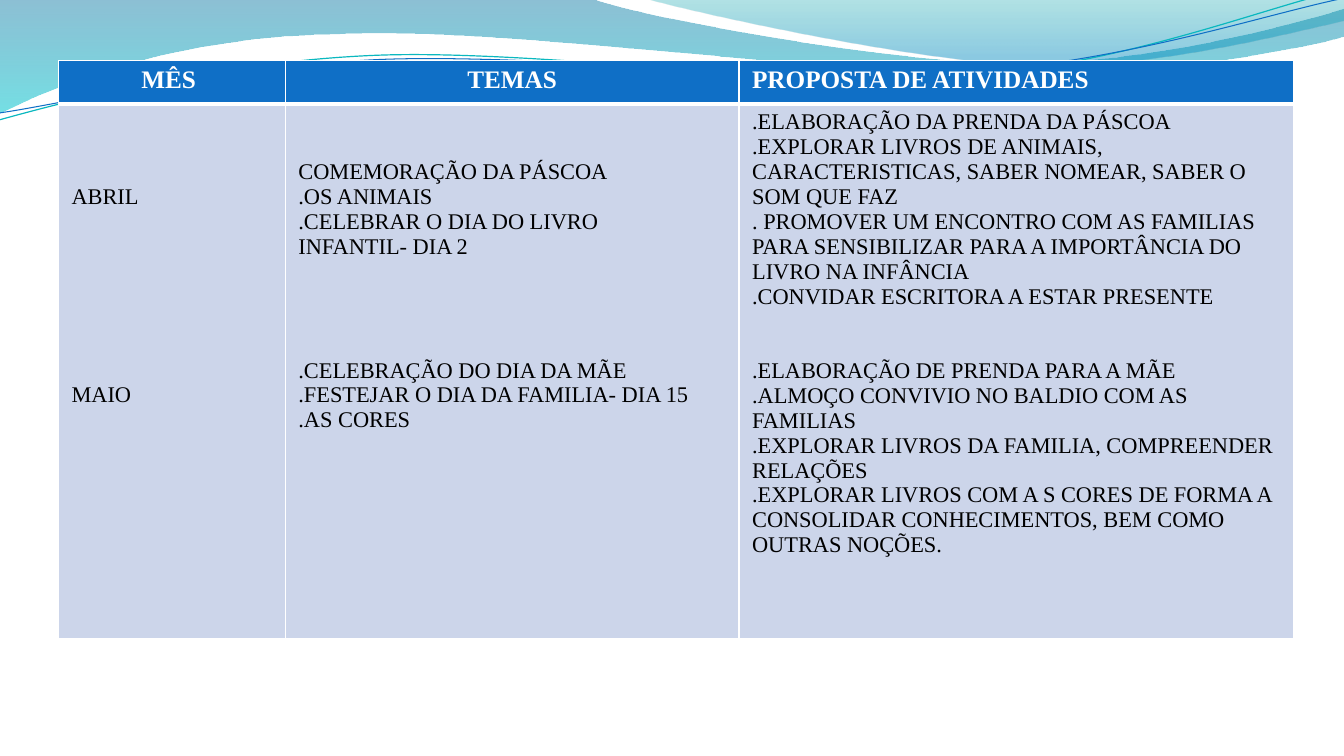
from dataclasses import dataclass

from lxml import etree
from pptx import Presentation
from pptx.dml.color import RGBColor
from pptx.enum.text import PP_ALIGN
from pptx.oxml.ns import qn
from pptx.shapes.autoshape import Shape
from pptx.slide import Slide
from pptx.table import _Cell
from pptx.util import Inches, Pt

CENTER, LEFT = PP_ALIGN.CENTER, PP_ALIGN.LEFT


@dataclass(frozen=True)
class Theme:
    font: str = "Times New Roman"
    header_size: float = 18
    body_size: float = 16
    line_height: float = 17.7
    header_fill: str = "0F6FC6"
    body_fill: str = "CCD5EA"
    white: str = "FFFFFF"
    black: str = "000000"
    teal: str = "0AB8BF"
    wave_top: str = "0074A1"
    wave_bottom: str = "00C6CF"
    crest_top: str = "00A1A9"
    crest_bottom: str = "008BBF"


@dataclass(frozen=True)
class Stop:
    position: float
    color: str
    opacity: int


@dataclass(frozen=True)
class Outline:
    start: tuple[float, float]
    segments: list[tuple[float, ...]]


@dataclass(frozen=True)
class Band(Outline):
    stops: tuple[Stop, Stop]


@dataclass(frozen=True)
class Strand(Outline):
    color: str
    width: float


@dataclass(frozen=True)
class Column:
    title: str
    alignment: PP_ALIGN
    width: float
    lines_above: int
    lines_between: int
    april: list[str]
    may: list[str]


THEME = Theme()

BANDS = [
    Band((0, 0), [(5.87, -0.01), (6.34, 0.17, 8.85, 0.63, 10.11, 0.63),
                  (11.38, 0.63, 12.78, 0.26, 13.33, 0.09), (13.35, 0.36),
                  (13.11, 0.44, 11.6, 0.76, 9.94, 0.75),
                  (8.29, 0.75, 5.09, 0.28, 3.43, 0.34),
                  (1.72, 0.36, 0.61, 0.83, -0.01, 1.13), (0, 0)],
         (Stop(0, THEME.wave_top, 45), Stop(1, THEME.wave_bottom, 55))),
    Band((6.39, -0.01), [(6.79, 0.11, 9.09, 0.62, 10.25, 0.65),
                         (11.41, 0.69, 12.82, 0.32, 13.33, 0.21), (13.33, 0),
                         (6.39, -0.01)],
         (Stop(0, THEME.crest_top, 30), Stop(0.8, THEME.crest_bottom, 45))),
]

STRANDS = [
    Strand((-0.01, 1.19), [(0.64, 1.01, 2.11, 0.62, 3.69, 0.55),
                           (5.27, 0.48, 7.9, 0.87, 9.5, 0.76),
                           (11.1, 0.66, 12.52, 0.08, 13.31, -0.1)], THEME.teal, 0.85),
    Strand((0, 1.12), [(0.63, 1.03, 2.18, 0.66, 3.78, 0.59),
                       (5.37, 0.53, 7.96, 0.82, 9.55, 0.72),
                       (11.15, 0.62, 12.55, 0.14, 13.34, -0.02)], THEME.header_fill, 0.75),
]

COLUMNS = [
    Column("MÊS ", CENTER, 2.25, 3, 7, ["ABRIL"], ["MAIO"]),
    Column("TEMAS", CENTER, 4.5, 2, 4,
           ["COMEMORAÇÃO DA PÁSCOA", ".OS ANIMAIS", ".CELEBRAR O DIA DO LIVRO",
            "INFANTIL- DIA 2"],
           [".CELEBRAÇÃO DO DIA DA MÃE", ".FESTEJAR O DIA DA FAMILIA- DIA 15",
            ".AS CORES"]),
    Column("PROPOSTA DE ATIVIDADES", LEFT, 5.5, 0, 2,
           [".ELABORAÇÃO DA PRENDA DA PÁSCOA",
            ".EXPLORAR LIVROS DE ANIMAIS, CARACTERISTICAS, SABER NOMEAR, SABER O SOM QUE FAZ",
            ". PROMOVER UM ENCONTRO COM AS FAMILIAS PARA SENSIBILIZAR PARA A IMPORTÂNCIA "
            "DO LIVRO NA INFÂNCIA",
            ".CONVIDAR ESCRITORA A ESTAR PRESENTE"],
           [".ELABORAÇÃO DE PRENDA PARA A MÃE",
            ".ALMOÇO CONVIVIO NO BALDIO COM AS FAMILIAS",
            ".EXPLORAR LIVROS DA FAMILIA, COMPREENDER RELAÇÕES",
            ".EXPLORAR LIVROS COM A S CORES DE FORMA A CONSOLIDAR CONHECIMENTOS, "
            "BEM COMO OUTRAS NOÇÕES."]),
]


def add_outline(slide: Slide, outline: Outline, *, close: bool) -> Shape:
    corners = [(Inches(x), Inches(y)) for segment in outline.segments
               for x, y in zip(segment[::2], segment[1::2])]
    builder = slide.shapes.build_freeform(*map(Inches, outline.start))
    builder.add_line_segments(corners, close=close)
    shape = builder.convert_to_shape()
    shape.shadow.inherit = False
    steps = iter(list(shape._element.spPr.iter(qn("a:lnTo"))))
    for segment in outline.segments:
        first = next(steps)
        if len(segment) == 6:
            first.tag = qn("a:cubicBezTo")
            for control in (next(steps), next(steps)):
                first.append(control[0])
                control.getparent().remove(control)
    return shape


def add_band(slide: Slide, band: Band) -> None:
    shape = add_outline(slide, band, close=True)
    shape.line.fill.background()
    shape.fill.gradient()
    shape.fill.gradient_angle = 270
    for gradient_stop, stop in zip(shape.fill.gradient_stops, band.stops):
        gradient_stop.position = stop.position
        gradient_stop.color.rgb = RGBColor.from_string(stop.color)
    colors = shape._element.spPr.iter(qn("a:srgbClr"))
    for color, stop in zip(colors, band.stops):
        etree.SubElement(color, qn("a:alpha"), val=str(stop.opacity * 1000))


def add_strand(slide: Slide, strand: Strand) -> None:
    shape = add_outline(slide, strand, close=False)
    shape.fill.background()
    shape.line.color.rgb = RGBColor.from_string(strand.color)
    shape.line.width = Pt(strand.width)


def style_cell(cell: _Cell, *, fill: str, top: float, bottom: float) -> None:
    cell.fill.solid()
    cell.fill.fore_color.rgb = RGBColor.from_string(fill)
    cell.margin_left = cell.margin_right = Inches(0.13)
    cell.margin_top = cell.margin_bottom = Inches(0.05)
    properties = cell._tc.get_or_add_tcPr()
    for index, (side, width) in enumerate((("L", 1), ("R", 1), ("T", top), ("B", bottom))):
        border = etree.Element(qn(f"a:ln{side}"), w=str(Pt(width)))
        solid = etree.SubElement(border, qn("a:solidFill"))
        etree.SubElement(solid, qn("a:srgbClr"), val=THEME.white)
        properties.insert(index, border)


def write_lines(cell: _Cell, lines: list[str], *, size: float, color: str, bold: bool = False,
                alignment: PP_ALIGN = LEFT, gap_index: int = 0, gap: float = 0) -> None:
    frame = cell.text_frame
    for index, text in enumerate(lines):
        paragraph = frame.add_paragraph() if index else frame.paragraphs[0]
        paragraph.alignment = alignment
        if index and index == gap_index:
            paragraph.space_before = Pt(gap)
        run = paragraph.add_run()
        run.text = text
        run.font.name, run.font.size, run.font.bold = THEME.font, Pt(size), bold
        run.font.color.rgb = RGBColor.from_string(color)


def add_plan(slide: Slide) -> None:
    table = slide.shapes.add_table(2, len(COLUMNS), Inches(0.58), Inches(0.6),
                                   Inches(12.25), Inches(5.74)).table
    table.horz_banding = False
    table.rows[0].height, table.rows[1].height = Inches(0.43), Inches(5.31)
    for index, column in enumerate(COLUMNS):
        table.columns[index].width = Inches(column.width)
        header, body = table.cell(0, index), table.cell(1, index)
        style_cell(header, fill=THEME.header_fill, top=1, bottom=3)
        write_lines(header, [column.title], size=THEME.header_size, color=THEME.white,
                    bold=True, alignment=column.alignment)
        style_cell(body, fill=THEME.body_fill, top=3, bottom=1)
        body.margin_top = Inches(0.06) + Pt(column.lines_above * THEME.line_height)
        write_lines(body, column.april + column.may, size=THEME.body_size, color=THEME.black,
                    gap_index=len(column.april), gap=column.lines_between * THEME.line_height)


def main() -> None:
    """Build the slide with the April and May activity plan."""
    presentation = Presentation()
    presentation.slide_width, presentation.slide_height = Inches(13.33), Inches(7.5)
    slide = presentation.slides.add_slide(presentation.slide_layouts[6])
    for band in BANDS:
        add_band(slide, band)
    for strand in STRANDS:
        add_strand(slide, strand)
    add_plan(slide)
    presentation.save("out.pptx")


if __name__ == "__main__":
    main()
